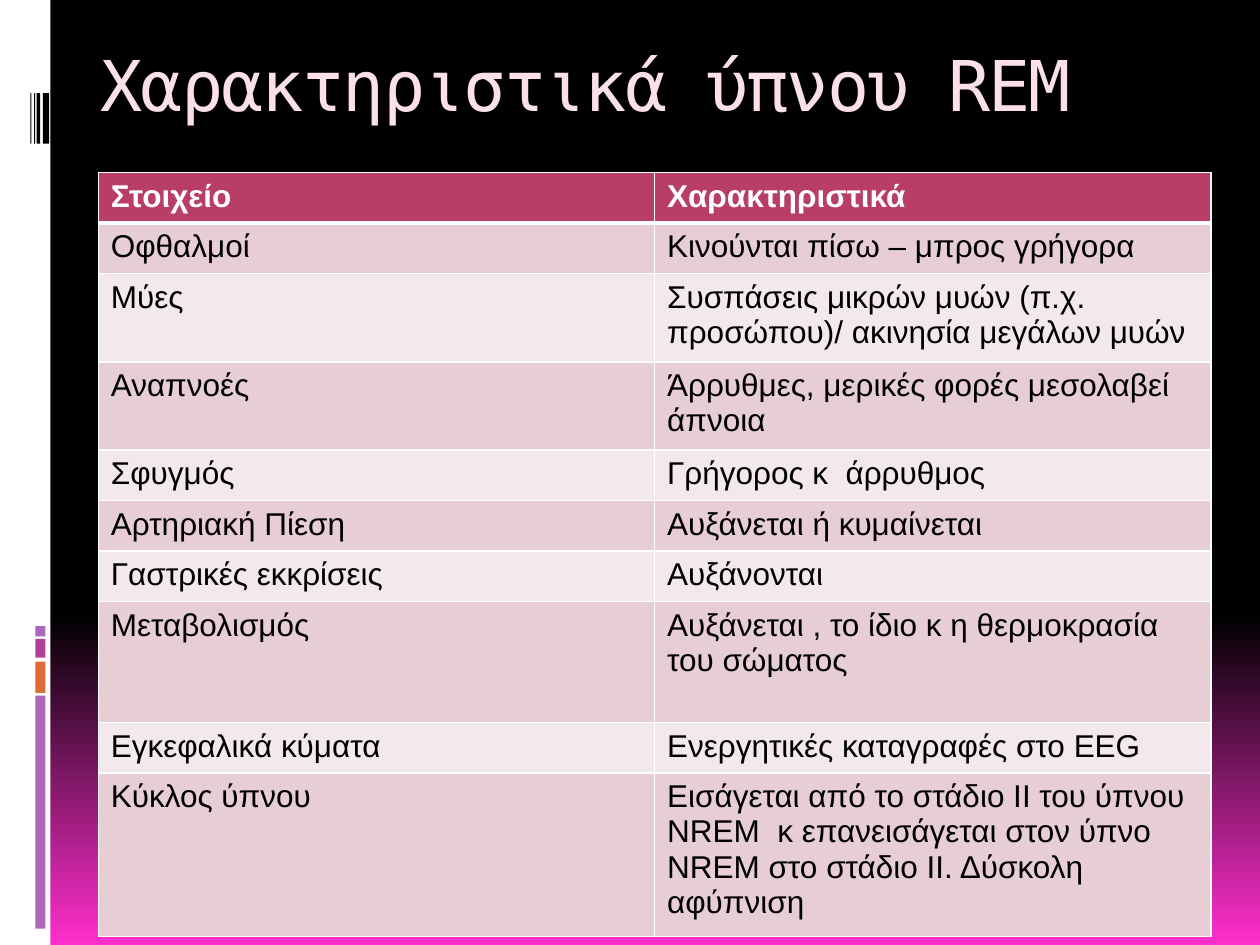
from lxml import etree
from pptx import Presentation
from pptx.dml.color import RGBColor
from pptx.enum.shapes import MSO_SHAPE
from pptx.enum.text import MSO_ANCHOR
from pptx.oxml.ns import qn
from pptx.util import Inches, Pt

RECT = MSO_SHAPE.RECTANGLE
TOP = MSO_ANCHOR.TOP
WIDE, HIGH = 10, 7.5
WHITE, BLACK = "FFFFFF", "000000"
HEAD, BANDS = "B83D68", ("E6CED4", "F3E8EB")
# left and width of each barcode line
CODE = [(0.34, 0.05), (0.29, 0.03), (0.27, 0.01), (0.24, 0.01)]
# top, height and colour of each block
BLOCKS = [(5.52, 1.85, "AC66BB"), (5.25, 0.25, "DE6C36"),
          (5.07, 0.15, "B13F9A"), (4.97, 0.08, "AC66BB")]
LINE, PAD = 0.285, 0.105
# item, trait, height in text lines
ROWS = [
    ("Στοιχείο", "Χαρακτηριστικά", 1),
    ("Οφθαλμοί", "Κινούνται πίσω – μπρος γρήγορα", 1),
    ("Μύες", "Συσπάσεις μικρών μυών (π.χ. προσώπου)/ ακινησία μεγάλων μυών", 2),
    ("Αναπνοές", "Άρρυθμες, μερικές φορές μεσολαβεί άπνοια", 2),
    ("Σφυγμός", "Γρήγορος κ  άρρυθμος", 1),
    ("Αρτηριακή Πίεση", "Αυξάνεται ή κυμαίνεται", 1),
    ("Γαστρικές εκκρίσεις", "Αυξάνονται", 1),
    ("Μεταβολισμός", "Αυξάνεται , το ίδιο κ η θερμοκρασία του σώματος", 3),
    ("Εγκεφαλικά κύματα", "Ενεργητικές καταγραφές στο EEG", 1),
    ("Κύκλος ύπνου", "Εισάγεται από το στάδιο ΙΙ του ύπνου NREM  κ επανεισάγεται "
     "στον ύπνο NREM στο στάδιο ΙΙ. Δύσκολη αφύπνιση", 4),
]


def rgb(code):
    return RGBColor.from_string(code)


def style(para, face, size, color, bold=False):
    font = para.font
    font.name, font.size, font.bold = face, Pt(size), bold
    font.color.rgb = rgb(color)


def paint_back(slide):
    fill = slide.background.fill
    fill.gradient()
    fill.gradient_angle = 270
    for stop, (pos, color) in zip(fill.gradient_stops,
                                  [(0.65, BLACK), (1, "FF2FCD")]):
        stop.position = pos
        stop.color.rgb = rgb(color)


def add_bar(slide, box, color):
    bar = slide.shapes.add_shape(RECT, *map(Inches, box))
    bar.shadow.inherit = False
    bar.fill.solid()
    bar.fill.fore_color.rgb = rgb(color)
    bar.line.fill.background()


def add_side(slide, box):
    left, top, _, _ = box
    add_bar(slide, box, WHITE)
    for y, high, color in BLOCKS:
        add_bar(slide, (left + 0.28, top + y, 0.08, high), color)
    for x, wide in CODE:
        add_bar(slide, (left + x, top + 0.74, wide, 0.4), BLACK)


def add_title(slide, box, text):
    frame = slide.shapes.add_textbox(*map(Inches, box)).text_frame
    frame.word_wrap = True
    frame.vertical_anchor = TOP
    frame.margin_top = Inches(0.1)
    para = frame.paragraphs[0]
    run = para.add_run()
    run.text = text
    style(para, "DejaVu Sans Mono", 40, "FBE0EC")
    run.font._element.set("spc", "-100")


def add_edges(cell, base):
    """Draw white borders; base is the width of the lower one in points."""
    props = cell._tc.get_or_add_tcPr()
    for spot, (side, wide) in enumerate(
            [("lnL", 1), ("lnR", 1), ("lnT", 1), ("lnB", base)]):
        line = etree.Element(qn("a:" + side), w=str(Pt(wide)))
        fill = etree.SubElement(line, qn("a:solidFill"))
        etree.SubElement(fill, qn("a:srgbClr"), val=WHITE)
        props.insert(spot, line)


def fill_cell(cell, text, color, head, base, over):
    cell.text = text
    cell.fill.solid()
    cell.fill.fore_color.rgb = rgb(color)
    style(cell.text_frame.paragraphs[0], "Arial", 18,
          WHITE if head else BLACK, head)
    add_edges(cell, base)
    if over:
        edge = cell._tc.tcPr.find(qn("a:lnT"))
        edge.set("w", str(Pt(over)))


def add_grid(slide, box):
    left, top, wide, _ = box
    highs = [PAD + LINE * lines for _, _, lines in ROWS]
    table = slide.shapes.add_table(
        len(ROWS), 2, *map(Inches, (left, top, wide, sum(highs)))).table
    table.horz_banding = False
    for col in table.columns:
        col.width = Inches(wide / 2)
    for r, (row, high) in enumerate(zip(ROWS, highs)):
        table.rows[r].height = Inches(high)
        head = r == 0
        color = HEAD if head else BANDS[(r - 1) % 2]
        for c, text in enumerate(row[:2]):
            fill_cell(table.cell(r, c), text, color, head,
                      3 if head else 1, 3 if r == 1 else 0)


def main():
    deck = Presentation()
    deck.slide_width, deck.slide_height = Inches(WIDE), Inches(HIGH)
    slide = deck.slides.add_slide(deck.slide_layouts[6])
    paint_back(slide)
    add_side(slide, (0, 0, 0.04 * WIDE, HIGH))
    add_title(slide, (0.7, 0.23, 8.5, 1), "Χαρακτηριστικά ύπνου REM")
    add_grid(slide, (0.78, 1.37, 8.83, 5.9))
    deck.save("out.pptx")


if __name__ == "__main__":
    main()
